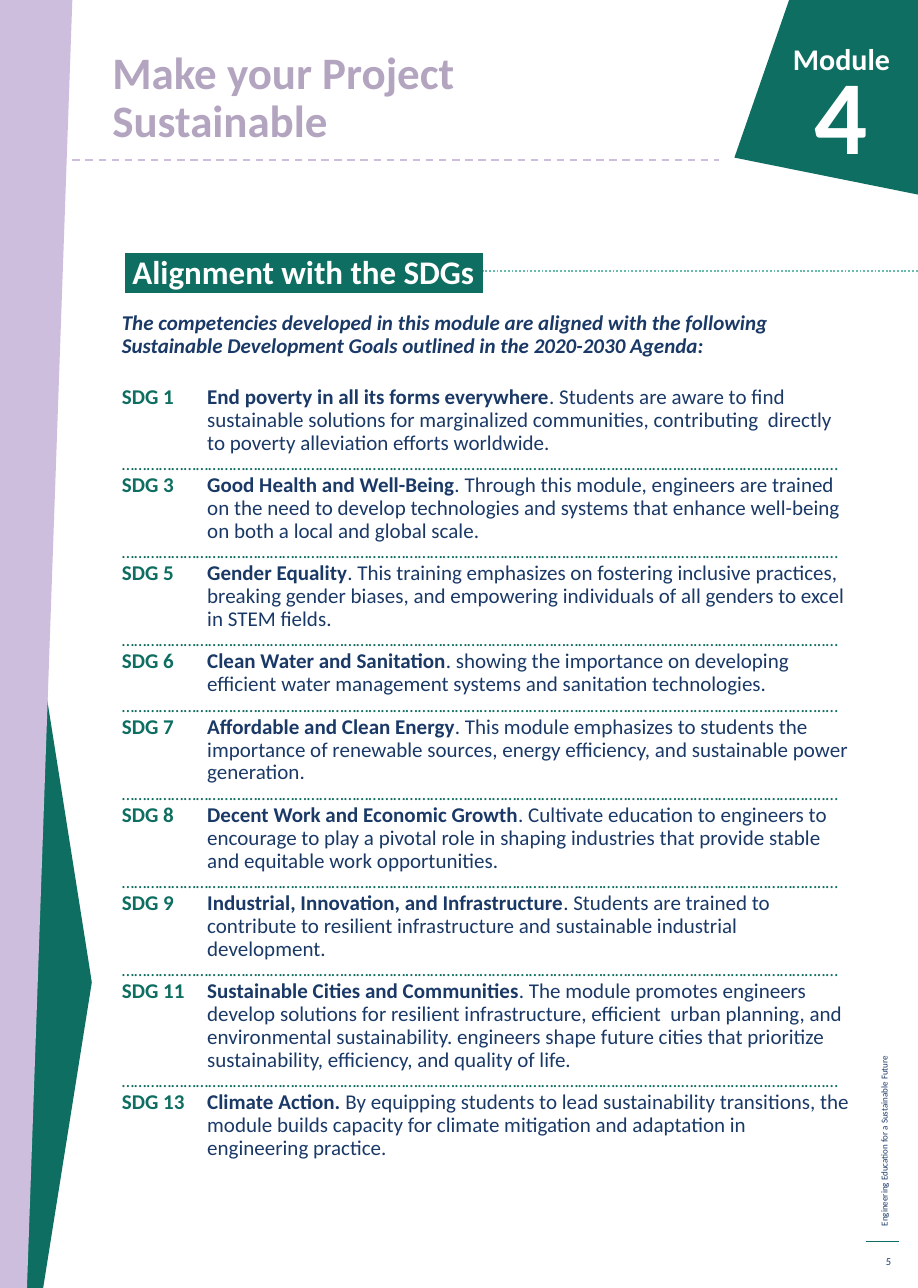
from typing import NamedTuple

from lxml.etree import SubElement
from pptx import Presentation
from pptx.dml.color import RGBColor
from pptx.enum.dml import MSO_LINE
from pptx.enum.shapes import MSO_CONNECTOR
from pptx.enum.text import MSO_ANCHOR, MSO_AUTO_SIZE, PP_ALIGN
from pptx.oxml.ns import qn
from pptx.util import Inches, Pt

GREEN = RGBColor(0x0E, 0x6E, 0x61)
MINT = RGBColor(0x69, 0xBC, 0xAC)
LILAC = RGBColor(0xCE, 0xBE, 0xDD)
MAUVE = RGBColor(0xB3, 0xA5, 0xC0)
NAVY = RGBColor(0x1A, 0x39, 0x66)
WHITE = RGBColor(0xFF, 0xFF, 0xFF)
FONT = "Calibri"

LEADER = "……………………………………………………………………………………………………………………….……………………………..…"
LEADER_SIZE = 12
LEADER_WIDTH = 478  # points
GLYPH_WIDTHS = {"…": 0.69, ".": 0.25}  # share of the font size


class Goal(NamedTuple):
    label: str
    name: str
    text: str


class Rule(NamedTuple):
    x1: float
    x2: float
    y: float
    color: RGBColor
    width: float
    dash: MSO_LINE | None = None


class Panel(NamedTuple):
    color: RGBColor
    points: list[tuple[float, float]]


class Label(NamedTuple):
    text: str
    box: tuple[float, float, float, float]
    size: float
    color: RGBColor
    bold: bool = False
    italic: bool = False
    align: PP_ALIGN = PP_ALIGN.LEFT
    anchor: MSO_ANCHOR = MSO_ANCHOR.TOP
    spacing: float | Pt | None = None
    rotation: float = 0


GOALS = [
    Goal("SDG 1", "End poverty in all its forms everywhere",
         ". Students are aware to find sustainable solutions for marginalized communities, "
         "contributing  directly to poverty alleviation efforts worldwide."),
    Goal("SDG 3", "Good Health and Well-Being",
         ". Through this module, engineers are trained on the need to develop technologies "
         "and systems that enhance well-being on both a local and global scale."),
    Goal("SDG 5", "Gender Equality",
         ". This training emphasizes on fostering inclusive practices, breaking gender biases, "
         "and empowering individuals of all genders to excel in STEM fields."),
    Goal("SDG 6", "Clean Water and Sanitation",
         ". showing the importance on developing efficient water management systems "
         "and sanitation technologies."),
    Goal("SDG 7", "Affordable and Clean Energy",
         ". This module emphasizes to students the importance of renewable sources, "
         "energy efficiency, and sustainable power generation."),
    Goal("SDG 8", "Decent Work and Economic Growth",
         ". Cultivate education to engineers to encourage to play a pivotal role in shaping "
         "industries that provide stable and equitable work opportunities."),
    Goal("SDG 9", "Industrial, Innovation, and Infrastructure",
         ". Students are trained to contribute to resilient infrastructure "
         "and sustainable industrial development."),
    Goal("SDG 11", "Sustainable Cities and Communities",
         ". The module promotes engineers develop solutions for resilient infrastructure, "
         "efficient  urban planning, and environmental sustainability. engineers shape future "
         "cities that prioritize sustainability, efficiency, and quality of life."),
    Goal("SDG 13", "Climate Action. ",
         "By equipping students to lead sustainability transitions, the module builds capacity "
         "for climate mitigation and adaptation in engineering practice."),
]

PANELS = [
    Panel(GREEN, [(0.4, 11.93), (0.23, 11.93), (0.23, 5.17), (0.83, 8.97), (0.85, 9.1)]),
    Panel(LILAC, [(0, 0), (0.67, 0), (0.25, 11.93), (0, 11.93)]),
    Panel(GREEN, [(8.55, -0.01), (7.31, -0.01), (6.8, 1.46), (8.54, 1.81)]),
]

RULES = [
    Rule(8.02, 8.32, 11.5, GREEN, 0.75),
    Rule(2.52, 8.5, 2.51, MINT, 1.25, MSO_LINE.ROUND_DOT),
    Rule(0.67, 6.66, 1.48, LILAC, 1.25, MSO_LINE.DASH),
]

LABELS = [
    Label("Engineering Education for a Sustainable Future", (5.94, 9.11, 4.49, 0.2), 6, NAVY,
          rotation=270),
    Label("5", (8.02, 11.54, 0.33, 0.29), 7, NAVY, align=PP_ALIGN.RIGHT,
          anchor=MSO_ANCHOR.MIDDLE),
    Label("The competencies developed in this module are aligned with the following "
          "Sustainable Development Goals outlined in the 2020-2030 Agenda:",
          (1.03, 2.85, 6.7, 0.65), 14, NAVY, bold=True, italic=True, spacing=Pt(14.8)),
    Label("Module", (6.54, 0.33, 1.8, 1.42), 20, WHITE, bold=True, align=PP_ALIGN.RIGHT),
    Label("4", (6.33, 0.41, 1.8, 1.42), 70, WHITE, bold=True, align=PP_ALIGN.RIGHT),
]


def style_run(r, size: float, color: RGBColor, bold: bool = False, italic: bool = False) -> None:
    r.font.name, r.font.size = FONT, Pt(size)
    r.font.bold, r.font.italic = bold, italic
    r.font.color.rgb = color


def add_run(p, text: str, size: float, color: RGBColor, bold: bool = False):
    r = p.add_run()
    r.text = text
    style_run(r, size, color, bold)
    return r


def add_box(s, box: tuple[float, float, float, float]):
    sp = s.shapes.add_textbox(*map(Inches, box))
    sp.text_frame.word_wrap = True
    return sp


def add_label(s, label: Label) -> None:
    sp = add_box(s, label.box)
    sp.rotation = label.rotation
    tf = sp.text_frame
    tf.text = label.text
    tf.vertical_anchor = label.anchor
    p = tf.paragraphs[0]
    p.alignment = label.align
    p.line_spacing = label.spacing
    style_run(p.runs[0], label.size, label.color, label.bold, label.italic)


def add_panel(s, panel: Panel) -> None:
    start, *rest = [(Inches(x), Inches(y)) for x, y in panel.points]
    builder = s.shapes.build_freeform(*start)
    builder.add_line_segments(rest, close=True)
    sp = builder.convert_to_shape()
    sp.shadow.inherit = False
    sp.fill.solid()
    sp.fill.fore_color.rgb = panel.color
    sp.line.fill.background()


def add_rule(s, rule: Rule) -> None:
    y = Inches(rule.y)
    line = s.shapes.add_connector(MSO_CONNECTOR.STRAIGHT, Inches(rule.x1), y, Inches(rule.x2), y)
    line.line.color.rgb = rule.color
    line.line.width = Pt(rule.width)
    line.line.dash_style = rule.dash
    SubElement(line._element.spPr, qn("a:effectLst"))


def add_title(s) -> None:
    sp = s.shapes.title
    sp.left, sp.top, sp.width, sp.height = map(Inches, (0.94, 0.41, 3.96, 1))
    tf = sp.text_frame
    tf.text = "Make your Project Sustainable"
    tf.word_wrap, tf.auto_size = True, MSO_AUTO_SIZE.NONE
    tf.vertical_anchor = MSO_ANCHOR.BOTTOM
    p = tf.paragraphs[0]
    p.alignment, p.line_spacing = PP_ALIGN.LEFT, 0.89
    style_run(p.runs[0], 30, MAUVE, bold=True)


def add_heading(s) -> None:
    p = add_box(s, (1.06, 2.32, 6.64, 0.46)).text_frame.paragraphs[0]
    p.line_spacing, p.space_before = 0.9, Pt(8.5)
    for text, color in ((" Alignment with the SDGs", WHITE), (".", GREEN)):
        r = add_run(p, text, 22, color, bold=True)
        highlight = SubElement(r.font._element, qn("a:highlight"))
        SubElement(highlight, qn("a:srgbClr"), val=str(GREEN))
        r.font._element.find(qn("a:solidFill")).addnext(highlight)


def add_goals(s) -> None:
    tf = add_box(s, (1.03, 3.53, 6.95, 7.53)).text_frame
    natural_width = LEADER_SIZE * sum(GLYPH_WIDTHS[c] for c in LEADER)
    tracking = round(100 * (LEADER_WIDTH - natural_width) / len(LEADER))
    for i, goal in enumerate(GOALS):
        p = tf.add_paragraph() if i else tf.paragraphs[0]
        if i:  # dotted leader between goals
            p.line_spacing = Pt(12.8)
            r = add_run(p, LEADER, LEADER_SIZE, GREEN)
            r.font._element.set("spc", str(tracking))
            p = tf.add_paragraph()
        p.line_spacing = 0.91
        add_run(p, f"{goal.label}\t", 14, GREEN, bold=True)
        add_run(p, goal.name, 14, NAVY, bold=True)
        add_run(p, goal.text, 14, NAVY)
    for p in tf.paragraphs:  # hanging indent
        pPr = p._p.get_or_add_pPr()
        pPr.set("marL", str(Inches(0.79)))
        pPr.set("indent", str(Inches(-0.79)))


def main() -> None:
    prs = Presentation()
    prs.slide_width, prs.slide_height = Inches(8.5), Inches(11.93)
    s = prs.slides.add_slide(prs.slide_layouts[5])
    # Side bands, module badge and rules
    for panel in PANELS:
        add_panel(s, panel)
    for rule in RULES:
        add_rule(s, rule)
    # Text
    add_title(s)
    add_heading(s)
    add_goals(s)
    for label in LABELS:
        add_label(s, label)
    prs.save("out.pptx")


if __name__ == "__main__":
    main()
